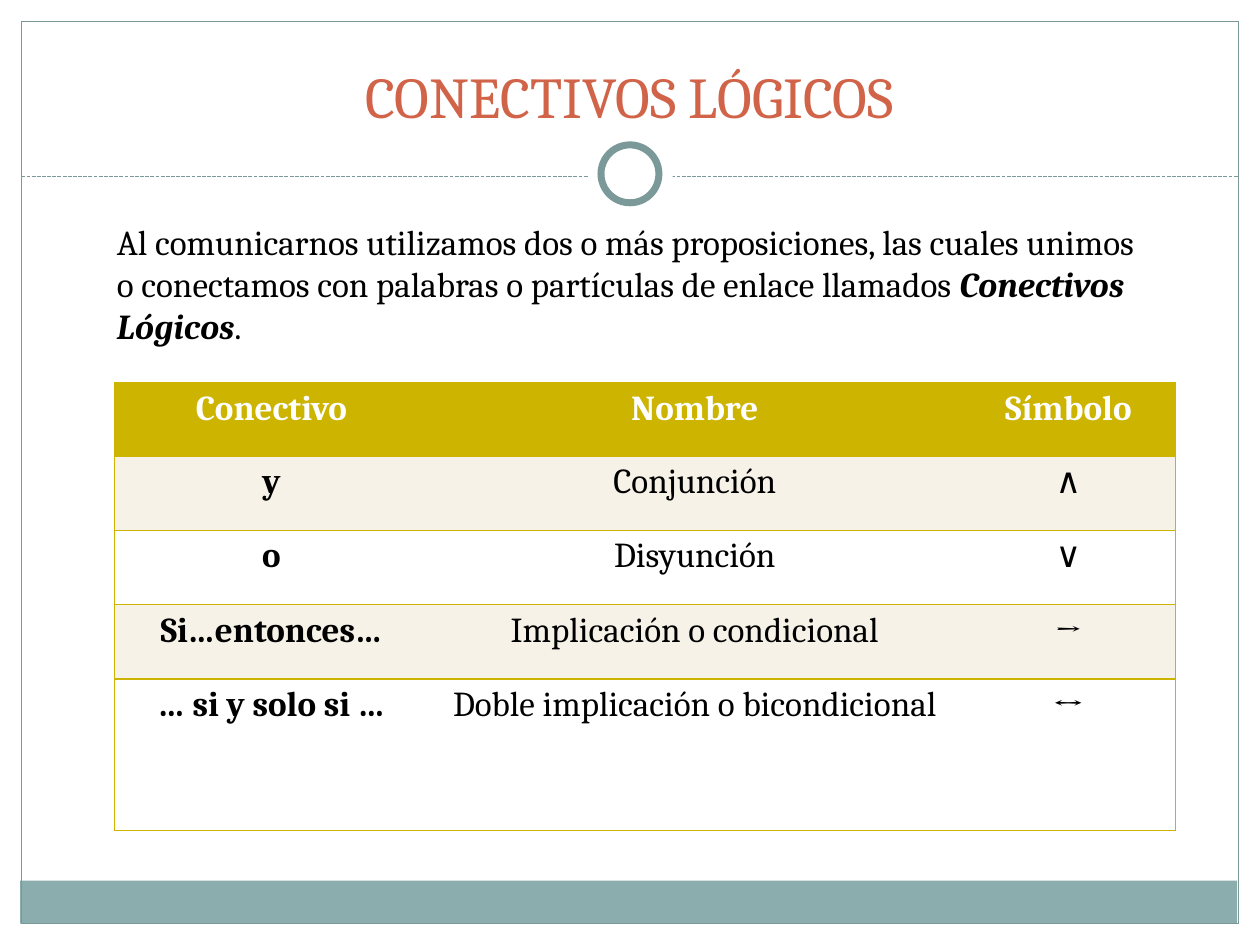
from dataclasses import dataclass

from lxml import etree
from pptx import Presentation
from pptx import util as u
from pptx.dml.color import RGBColor
from pptx.enum import dml, shapes, text
from pptx.oxml.ns import qn


@dataclass(frozen=True)
class Theme:
    font: str = "Cambria"
    title_size: float = 33
    body_size: float = 20
    title: str = "D16349"
    ink: str = "000000"
    paper: str = "FFFFFF"
    frame: str = "7C999A"
    footer: str = "8CADAE"
    gold: str = "CCB400"
    band: str = "F6F2E7"


def color(value):
    return RGBColor.from_string(value)


def box(*lengths):
    return [u.Inches(length) for length in lengths]


class SlideBuilder:
    def __init__(self, slide, theme):
        self.slide = slide
        self.theme = theme

    def style_run(self, run, size, ink, bold=False, italic=False):
        font = run.font
        font.name, font.size = self.theme.font, u.Pt(size)
        font.bold, font.italic = bold, italic
        font.color.rgb = color(ink)

    def title(self, wording, *place):
        shape = self.slide.shapes.title
        shape.left, shape.top, shape.width, shape.height = box(*place)
        frame = shape.text_frame
        frame.text = wording
        frame.vertical_anchor = text.MSO_ANCHOR.BOTTOM
        paragraph = frame.paragraphs[0]
        paragraph.alignment = text.PP_ALIGN.CENTER
        self.style_run(paragraph.runs[0], self.theme.title_size, self.theme.title)

    def shape(self, kind, *place, fill=None, line=None, weight=0.75):
        shape = self.slide.shapes.add_shape(kind, *box(*place))
        shape.shadow.inherit = False
        if fill:
            shape.fill.solid()
            shape.fill.fore_color.rgb = color(fill)
        else:
            shape.fill.background()
        if line:
            shape.line.color.rgb = color(line)
            shape.line.width = u.Pt(weight)
        else:
            shape.line.fill.background()

    def dashed_line(self, *ends):
        connector = self.slide.shapes.add_connector(
            shapes.MSO_CONNECTOR.STRAIGHT, *box(*ends))
        connector.line.color.rgb = color(self.theme.frame)
        connector.line.width = u.Pt(0.75)
        connector.line.dash_style = dml.MSO_LINE.SQUARE_DOT
        etree.SubElement(connector._element.spPr, qn("a:effectLst"))

    def paragraph_box(self, parts, *place):
        frame = self.slide.shapes.add_textbox(*box(*place)).text_frame
        frame.word_wrap = True
        frame.auto_size = text.MSO_AUTO_SIZE.SHAPE_TO_FIT_TEXT
        for wording, strong in parts:
            run = frame.paragraphs[0].add_run()
            run.text = wording
            self.style_run(run, self.theme.body_size, self.theme.ink, strong, strong)

    def borders(self, cell, visible):
        properties = cell._tc.get_or_add_tcPr()
        for side in "LRTB":
            line = etree.SubElement(properties, qn(f"a:ln{side}"), w=str(u.Pt(1)))
            if side in visible:
                fill = etree.SubElement(line, qn("a:solidFill"))
                etree.SubElement(fill, qn("a:srgbClr"), val=self.theme.gold)
            else:
                etree.SubElement(line, qn("a:noFill"))

    def cell(self, cell, wording, fill, ink, bold, sides):
        self.borders(cell, sides)
        cell.fill.solid()
        cell.fill.fore_color.rgb = color(fill)
        cell.margin_left = cell.margin_right = u.Inches(0.07)
        cell.margin_top = cell.margin_bottom = 0
        cell.text_frame.text = wording
        paragraph = cell.text_frame.paragraphs[0]
        paragraph.alignment = text.PP_ALIGN.CENTER
        paragraph.line_spacing = 1.15
        self.style_run(paragraph.runs[0], self.theme.body_size, ink, bold)

    def table(self, rows, left, top, widths, heights):
        table = self.slide.shapes.add_table(
            len(rows), len(widths),
            *box(left, top, sum(widths), sum(heights))).table
        for column, width in zip(table.columns, widths):
            column.width = u.Inches(width)
        last = len(widths) - 1
        for i, (row, height) in enumerate(zip(rows, heights)):
            table.rows[i].height = u.Inches(height)
            header = i == 0
            banded = self.theme.band if i % 2 else self.theme.paper
            fill = self.theme.gold if header else banded
            ink = self.theme.paper if header else self.theme.ink
            for j, wording in enumerate(row):
                sides = "TB" + ("L" if j == 0 else "") + ("R" if j == last else "")
                self.cell(table.cell(i, j), wording, fill, ink,
                          header or j == 0, sides)


def main():
    presentation = Presentation()
    presentation.slide_width, presentation.slide_height = box(10, 7.5)
    theme = Theme()
    slide = presentation.slides.add_slide(presentation.slide_layouts[5])
    builder = SlideBuilder(slide, theme)
    rectangle, oval = shapes.MSO_SHAPE.RECTANGLE, shapes.MSO_SHAPE.OVAL

    # Page frame, footer band and divider with ring
    builder.shape(rectangle, 0.16, 6.99, 9.66, 0.34, fill=theme.footer)
    builder.shape(rectangle, 0.17, 0.17, 9.66, 7.16, line=theme.frame)
    builder.dashed_line(0.17, 1.4, 9.83, 1.4)
    builder.shape(oval, 4.67, 1.05, 0.67, 0.67, fill=theme.paper)
    builder.shape(oval, 4.77, 1.15, 0.46, 0.46, fill=theme.paper,
                  line=theme.frame, weight=4)

    # Title and introduction
    builder.title("CONECTIVOS LÓGICOS", 0.33, 0.25, 9.33, 0.83)
    builder.paragraph_box([
        ("Al comunicarnos utilizamos dos o más proposiciones, las cuales unimos "
         "o conectamos con palabras o partículas de enlace llamados ", False),
        ("Conectivos Lógicos", True),
        (".", False),
    ], 0.83, 1.7, 8.43, 1.11)

    # Table of connectives
    builder.table([
        ("Conectivo", "Nombre", "Símbolo"),
        ("y", "Conjunción", "∧"),
        ("o", "Disyunción", "∨"),
        ("Si…entonces…", "Implicación o condicional", "→"),
        ("… si y solo si …", "Doble implicación o bicondicional", "↔"),
    ], 0.91, 3.04, widths=[2.49, 4.23, 1.7], heights=[0.58, 0.59, 0.59, 0.59, 1.2])

    presentation.save("out.pptx")


if __name__ == "__main__":
    main()
